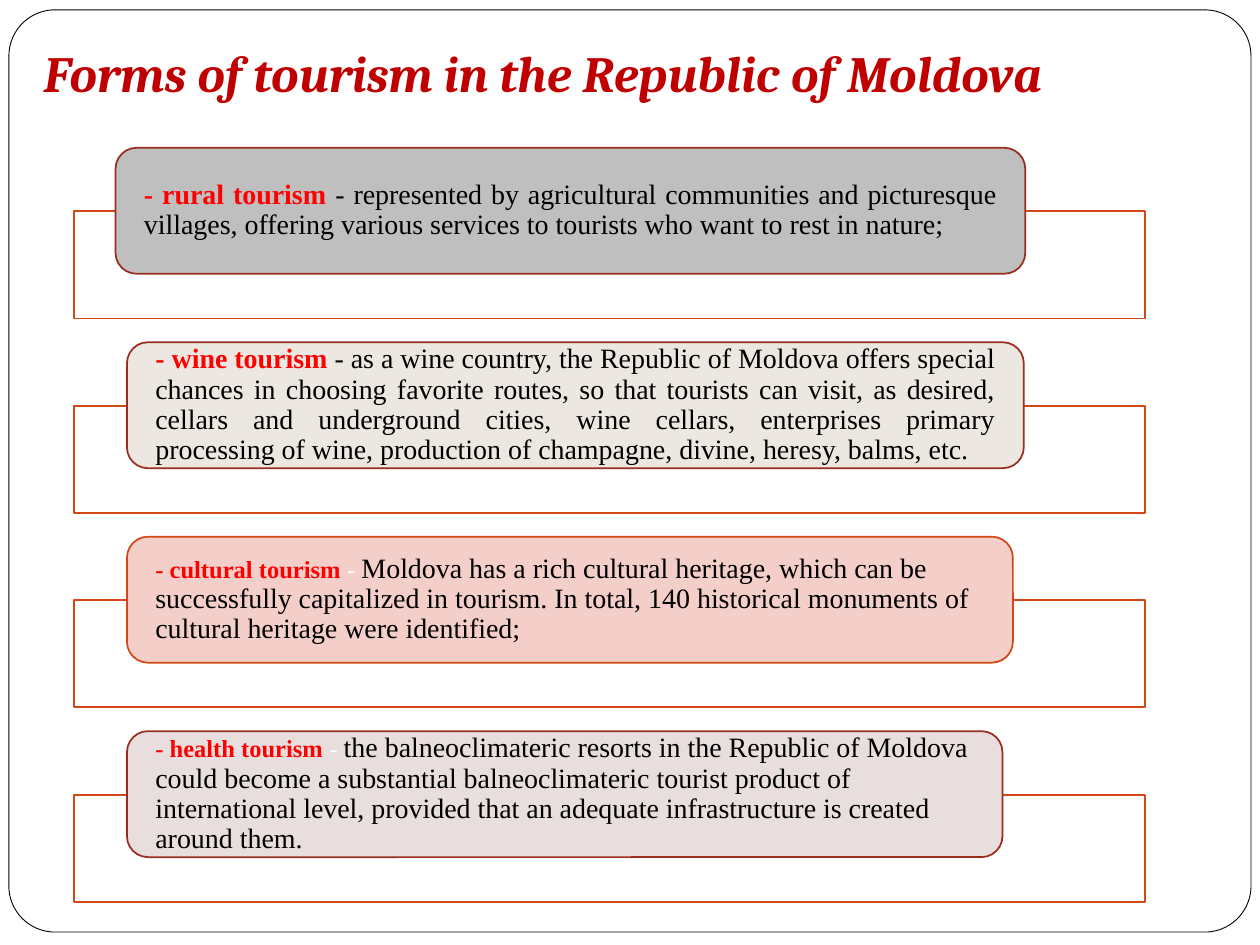
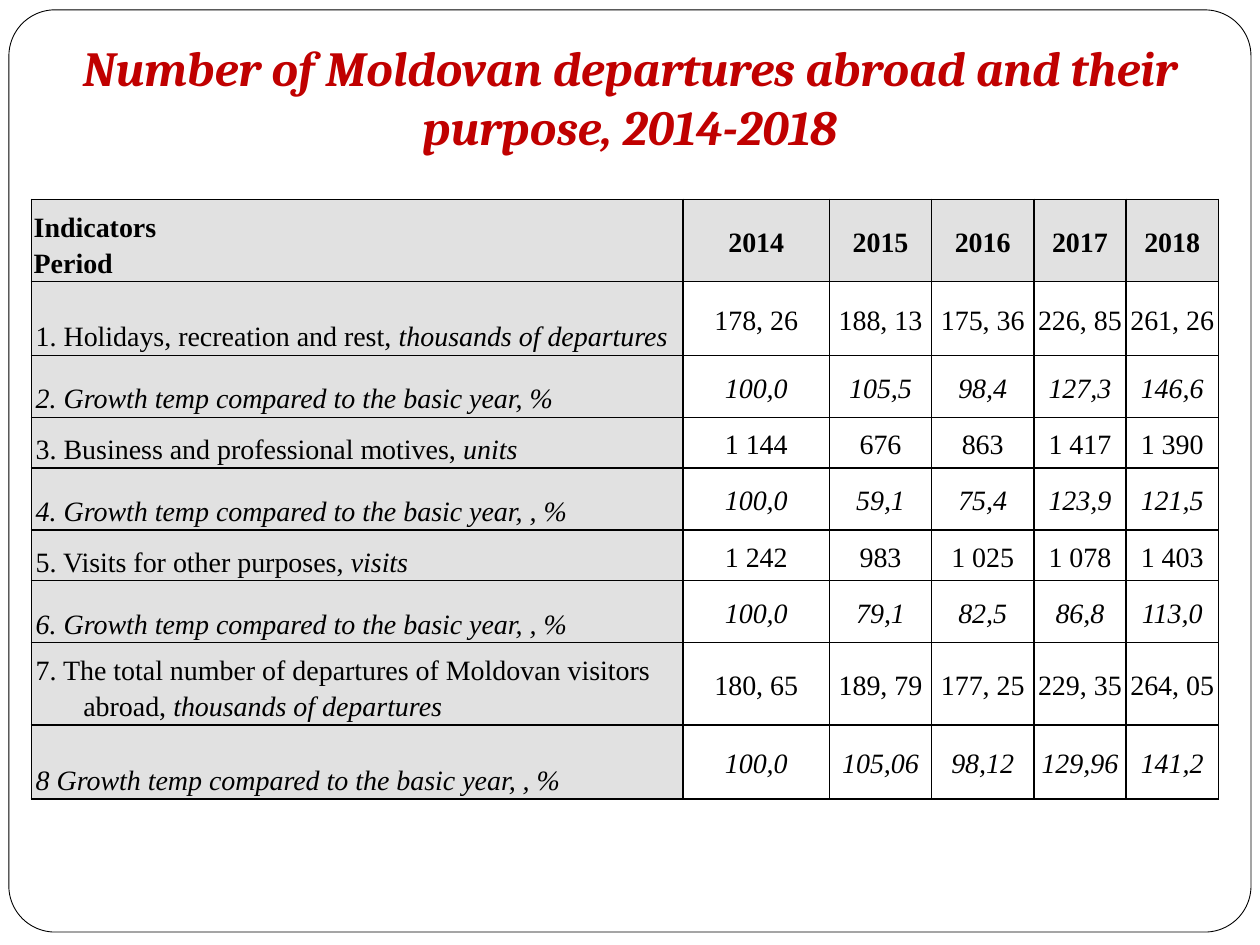
from lxml import etree
from pptx import Presentation
from pptx.dml.color import RGBColor
from pptx.enum.shapes import MSO_SHAPE
from pptx.enum.text import MSO_ANCHOR, PP_ALIGN
from pptx.oxml.ns import qn
from pptx.util import Cm, Pt

RECT, ROUNDED = MSO_SHAPE.RECTANGLE, MSO_SHAPE.ROUNDED_RECTANGLE
LEFT, CENTER, JUSTIFY = PP_ALIGN.LEFT, PP_ALIGN.CENTER, PP_ALIGN.JUSTIFY
TOP, MIDDLE, BOTTOM = MSO_ANCHOR.TOP, MSO_ANCHOR.MIDDLE, MSO_ANCHOR.BOTTOM

COLORS = {
    "white": "FFFFFF", "black": "000000", "title": "C00000", "term": "FF0000",
    "orange": "D34817", "brick": "9B2D1F", "label": "E1E1E1",
    "rural": "BFBFBF", "wine": "ECE8E1", "cultural": "F4CEC9", "health": "E8DEDE",
}
HEAD_FONT, BODY_FONT = "Cambria", "Times New Roman"

# Each form: name, description, card left, card width, term size, alignment, outline
FORMS = [
    ("rural", "represented by agricultural communities and picturesque villages, "
     "offering various services to tourists who want to rest in nature;",
     2.33, 18.34, 16, JUSTIFY, "brick"),
    ("wine", "as a wine country, the Republic of Moldova offers special chances in "
     "choosing favorite routes, so that tourists can visit, as desired, cellars and "
     "underground cities, wine cellars, enterprises primary processing of wine, "
     "production of champagne, divine, heresy, balms, etc.",
     2.56, 18.08, 16, JUSTIFY, "brick"),
    ("cultural", "Moldova has a rich cultural heritage, which can be successfully "
     "capitalized in tourism. In total, 140 historical monuments of cultural heritage "
     "were identified;", 2.56, 17.86, 14, LEFT, "orange"),
    ("health", "the balneoclimateric resorts in the Republic of Moldova could become a "
     "substantial balneoclimateric tourist product of international level, provided "
     "that an adequate infrastructure is created around them.",
     2.56, 17.65, 14, LEFT, "brick"),
]
FORM_PITCH = 3.92

YEARS = ["2014", "2015", "2016", "2017", "2018"]
# Each row: plain label, italic label, values, height; a row without plain label is italic
DEPARTURES = [
    ("1. Holidays, recreation and rest, ", "thousands of departures",
     ["178, 26", "188, 13", "175, 36", "226, 85", "261, 26"], 1.49),
    ("", "2. Growth temp compared to the basic year, %",
     ["100,0", "105,5", "98,4", "127,3", "146,6"], 1.25),
    ("3. Business and professional motives, ", "units",
     ["1 144", "676", "863", "1 417", "1 390"], 1.02),
    ("", "4. Growth temp compared to the basic year, , %",
     ["100,0", "59,1", "75,4", "123,9", "121,5"], 1.25),
    ("5. Visits for other purposes, ", "visits",
     ["1 242", "983", "1 025", "1 078", "1 403"], 1.02),
    ("", "6. Growth temp compared to the basic year, , %",
     ["100,0", "79,1", "82,5", "86,8", "113,0"], 1.25),
    ("7. The total number of departures of Moldovan visitors abroad,",
     " thousands of departures",
     ["180, 65", "189, 79", "177, 25", "229, 35", "264, 05"], 1.65),
    ("", "8 Growth temp compared to the basic year, , %",
     ["100,0", "105,06", "98,12", "129,96", "141,2"], 1.49),
]
HEADER_HEIGHT = 1.65
COLUMN_WIDTHS = [13.14, 2.95, 2.06, 2.06, 1.86, 1.86]


def color(name):
    return RGBColor.from_string(COLORS[name])


def set_attributes(target, values):
    for name, value in values.items():
        setattr(target, name, value)


def set_margins(target, left, top, right, bottom):
    set_attributes(target, {"margin_left": Cm(left), "margin_top": Cm(top),
                            "margin_right": Cm(right), "margin_bottom": Cm(bottom)})


def add_spans(para, spans, **base):
    """Add (text, format) runs; each format overrides the base format."""
    for text, extra in spans:
        span = para.add_run()
        span.text = text
        look = {"name": BODY_FONT, "size": Pt(16), "bold": False, "italic": False,
                "color": "black", **base, **extra}
        span.font.color.rgb = color(look.pop("color"))
        set_attributes(span.font, look)


def add_panel(page, kind, left, top, width, height, fill, line, weight=1):
    panel = page.shapes.add_shape(kind, Cm(left), Cm(top), Cm(width), Cm(height))
    panel.shadow.inherit = False
    panel.fill.solid()
    panel.fill.fore_color.rgb = color(fill)
    panel.line.color.rgb = color(line)
    panel.line.width = Pt(weight)
    return panel


def add_page(deck):
    """Add a blank slide with the rounded page frame."""
    page = deck.slides.add_slide(deck.slide_layouts[6])
    frame = add_panel(page, ROUNDED, 0.18, 0.2, 25.04, 18.59, "white", "black", 0.5)
    frame.adjustments[0] = 0.05
    return page


def add_title(page, text, top, width, height, size, align, anchor):
    box = page.shapes.add_textbox(Cm(0.63), Cm(top), Cm(width), Cm(height))
    frame = box.text_frame
    set_attributes(frame, {"word_wrap": True, "vertical_anchor": anchor})
    para = frame.paragraphs[0]
    para.alignment = align
    add_spans(para, [(text, {})], name=HEAD_FONT, size=Pt(size), bold=True,
              italic=True, color="title")
    return box


def add_form(page, index, form):
    """Add the outlined band of one form of tourism with its card on top."""
    name, description, left, width, term_size, align, line = form
    offset = index * FORM_PITCH
    add_panel(page, RECT, 1.49, 4.26 + offset, 21.59, 2.16, "white", "orange")
    card = add_panel(page, ROUNDED, left, 2.98 + offset, width, 2.54, name, line)
    frame = card.text_frame
    set_attributes(frame, {"word_wrap": True, "vertical_anchor": MIDDLE})
    set_margins(frame, 0.45, 0, 0.45, 0)
    para = frame.paragraphs[0]
    set_attributes(para, {"alignment": align, "line_spacing": 0.9})
    dash = {} if term_size == 16 else {"size": Pt(term_size), "color": "white"}
    add_spans(para, [
        (f"- {name} tourism ", {"size": Pt(term_size), "bold": True, "color": "term"}),
        ("- ", dash),
        (description, {}),
    ])


def add_borders(cell):
    properties = cell._tc.get_or_add_tcPr()
    for side in ("lnL", "lnR", "lnT", "lnB"):
        border = etree.SubElement(properties, qn(f"a:{side}"), w=str(Pt(1)))
        solid = etree.SubElement(border, qn("a:solidFill"))
        etree.SubElement(solid, qn("a:srgbClr"), val=COLORS["black"])


def format_cell(cell, fill, anchor, left_margin=0.05):
    add_borders(cell)
    cell.fill.solid()
    cell.fill.fore_color.rgb = color(fill)
    cell.vertical_anchor = anchor
    set_margins(cell, left_margin, 0.05, 0.05, 0.05)


def add_cell_line(para, spans, align, **base):
    set_attributes(para, {"alignment": align, "line_spacing": 1.15})
    add_spans(para, spans, **base)


def fill_values(cells, values, fill, **base):
    for cell, value in zip(cells, values):
        format_cell(cell, fill, MIDDLE)
        add_cell_line(cell.text_frame.paragraphs[0], [(value, {})], CENTER, **base)


def fill_label(cell, plain, italic):
    """Fill a row label with a hanging indent and without pair kerning."""
    format_cell(cell, "label", BOTTOM, 0.09)
    para = cell.text_frame.paragraphs[0]
    indent = para._p.get_or_add_pPr()
    indent.set("marL", str(Cm(0.96)))
    indent.set("indent", str(-Cm(0.96)))
    spans = [(plain, {})] if plain else []
    add_cell_line(para, spans + [(italic, {"italic": True})], LEFT)
    for span in para.runs:
        span._r.get_or_add_rPr().set("kern", "0")


def add_departures_table(page):
    heights = [HEADER_HEIGHT] + [row[-1] for row in DEPARTURES]
    table = page.shapes.add_table(
        len(heights), len(COLUMN_WIDTHS), Cm(0.63), Cm(4.02),
        Cm(sum(COLUMN_WIDTHS)), Cm(sum(heights))).table
    set_attributes(table, {"first_row": False, "horz_banding": False})
    for column, width in zip(table.columns, COLUMN_WIDTHS):
        column.width = Cm(width)
    for row, height in zip(table.rows, heights):
        row.height = Cm(height)

    corner, *year_cells = table.rows[0].cells
    format_cell(corner, "label", BOTTOM)
    frame = corner.text_frame
    for para, text in ((frame.paragraphs[0], "Indicators"),
                       (frame.add_paragraph(), "Period")):
        add_cell_line(para, [(text, {})], LEFT, bold=True)
    fill_values(year_cells, YEARS, "label", bold=True)

    for index, (plain, italic, values, _) in enumerate(DEPARTURES, start=1):
        label, *value_cells = table.rows[index].cells
        fill_label(label, plain, italic)
        fill_values(value_cells, values, "white", italic=not plain)


def main():
    deck = Presentation()
    set_attributes(deck, {"slide_width": Cm(25.4), "slide_height": Cm(19.05)})

    forms_page = add_page(deck)
    title = add_title(forms_page, "Forms of tourism in the Republic of Moldova",
                      0.75, 24.33, 1.58, 29, LEFT, BOTTOM)
    title.text_frame.margin_bottom = Cm(0.25)
    for index, form in enumerate(FORMS):
        add_form(forms_page, index, form)

    departures_page = add_page(deck)
    add_title(departures_page,
              "Number of Moldovan departures abroad and their purpose, 2014-2018",
              0.63, 24.13, 2.64, 28, CENTER, TOP)
    add_departures_table(departures_page)

    deck.save("out.pptx")


if __name__ == "__main__":
    main()
